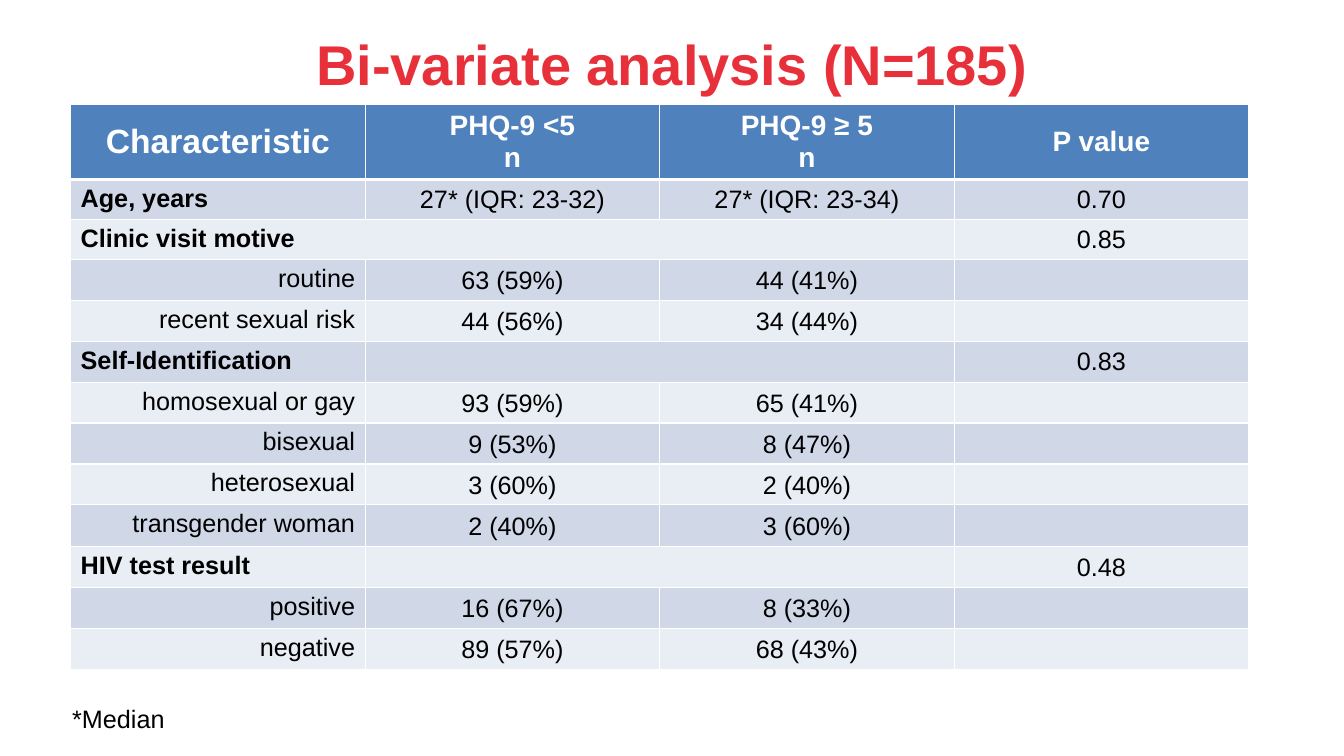
from dataclasses import dataclass

from lxml.etree import SubElement as Sub
from pptx import Presentation
from pptx.dml.color import RGBColor as RGB
from pptx.enum.text import MSO_ANCHOR as Anchor, PP_ALIGN as Align
from pptx.oxml.ns import qn
from pptx.util import Cm, Pt


@dataclass(frozen=True)
class Theme:
    font: str = "Arial"
    title: str = "E8303B"
    head: str = "4F81BD"
    bands: tuple = ("D0D8E8", "E9EDF4")
    light: str = "FFFFFF"
    dark: str = "000000"
    huge: int = 40
    large: int = 24
    mid: int = 20
    small: int = 18


THEME = Theme()
HEAD = ("Characteristic", "PHQ-9 <5\nn", "PHQ-9 ≥ 5\nn", "P value")
# Each group: label, cells beside it, and its subrows
GROUPS = (
    ("Age, years", ("27* (IQR: 23-32)", "27* (IQR: 23-34)"), "0.70", ()),
    ("Clinic visit motive", (), "0.85", (
        ("routine", "63 (59%)", "44 (41%)"),
        ("recent sexual risk", "44 (56%)", "34 (44%)"))),
    ("Self-Identification", (), "0.83", (
        ("homosexual or gay", "93 (59%)", "65 (41%)"),
        ("bisexual", "9 (53%)", "8 (47%)"),
        ("heterosexual", "3 (60%)", "2 (40%)"),
        ("transgender woman", "2 (40%)", "3 (60%)"))),
    ("HIV test result", (), "0.48", (
        ("positive", "16 (67%)", "8 (33%)"),
        ("negative", "89 (57%)", "68 (43%)"))),
)


def style(frame, size, color, bold=False, align=Align.LEFT):
    for para in frame.paragraphs:
        para.alignment = align
        for run in para.runs:
            font = run.font
            font.name, font.size, font.bold = THEME.font, Pt(size), bold
            font.color.rgb = RGB.from_string(color)


def paint(cell, color, base=1):
    """Give the cell white borders, the lower one base points wide, and a fill."""
    props = cell._tc.get_or_add_tcPr()
    for side, width in (("L", 1), ("R", 1), ("T", 1), ("B", base)):
        line = Sub(props, qn(f"a:ln{side}"), w=str(Pt(width)))
        Sub(Sub(line, qn("a:solidFill")), qn("a:srgbClr"), val=THEME.light)
    cell.fill.solid()
    cell.fill.fore_color.rgb = RGB.from_string(color)


def write(cell, text, bold=False, align=Align.CENTER, anchor=Anchor.MIDDLE):
    cell.text_frame.text = text
    cell.vertical_anchor = anchor
    style(cell.text_frame, THEME.small, THEME.dark, bold, align)


def add_head(table):
    for col, text in enumerate(HEAD):
        cell = table.cell(0, col)
        paint(cell, THEME.head, 3)
        write(cell, text)
        size = THEME.mid if col else THEME.large
        style(cell.text_frame, size, THEME.light, True, Align.CENTER)


def add_group(table, row, group):
    """Fill one group from the given row on and return the next free row."""
    label, pair, value, subs = group
    write(table.cell(row, 0), label, True, Align.LEFT, Anchor.TOP)
    write(table.cell(row, 3), value)
    for col, text in enumerate(pair, 1):
        write(table.cell(row, col), text)
    if not pair:
        first = 0 if label == "Clinic visit motive" else 1
        table.cell(row, first).merge(table.cell(row, 2))
    for row, (name, *counts) in enumerate(subs, row + 1):
        write(table.cell(row, 0), name, False, Align.RIGHT, Anchor.TOP)
        for col, text in enumerate(counts, 1):
            cell = table.cell(row, col)
            write(cell, text)
            cell.margin_left = cell.margin_right = Cm(0.18)
            cell.margin_top = cell.margin_bottom = 0
            cell.text_frame.paragraphs[0].line_spacing = 1.07
    return row + 1


def add_grid(slide, left, top, width, height):
    count = 1 + sum(1 + len(group[3]) for group in GROUPS)
    table = slide.shapes.add_table(
        count, len(HEAD), left, top, width, height).table
    for row in table.rows:
        row.height = Cm(1.01)
    table.rows[0].height = Cm(1.9)
    table.rows[9].height = Cm(1.06)
    for row in range(1, count):
        for col in range(len(HEAD)):
            paint(table.cell(row, col), THEME.bands[(row - 1) % 2])
    add_head(table)
    row = 1
    for group in GROUPS:
        row = add_group(table, row, group)


def add_title(slide, left, top, width, height):
    title = slide.shapes.title
    title.left, title.top, title.width, title.height = left, top, width, height
    frame = title.text_frame
    frame.text = "Bi-variate analysis (N=185)"
    frame.vertical_anchor = Anchor.MIDDLE
    style(frame, THEME.huge, THEME.title, True, Align.CENTER)


def add_note(slide, left, top, width, height):
    frame = slide.shapes.add_textbox(left, top, width, height).text_frame
    frame.text = "*Median"
    frame.word_wrap = False
    style(frame, THEME.small, THEME.dark)


def main():
    deck = Presentation()
    deck.slide_width, deck.slide_height = Cm(33.87), Cm(19.05)
    slide = deck.slides.add_slide(deck.slide_layouts[5])
    add_title(slide, Cm(2.08), Cm(0), Cm(29.69), Cm(3.18))
    add_grid(slide, Cm(1.78), Cm(2.62), Cm(29.69), Cm(14.17))
    add_note(slide, Cm(1.57), Cm(17.6), Cm(2.87), Cm(1.02))
    deck.save("out.pptx")


if __name__ == "__main__":
    main()
